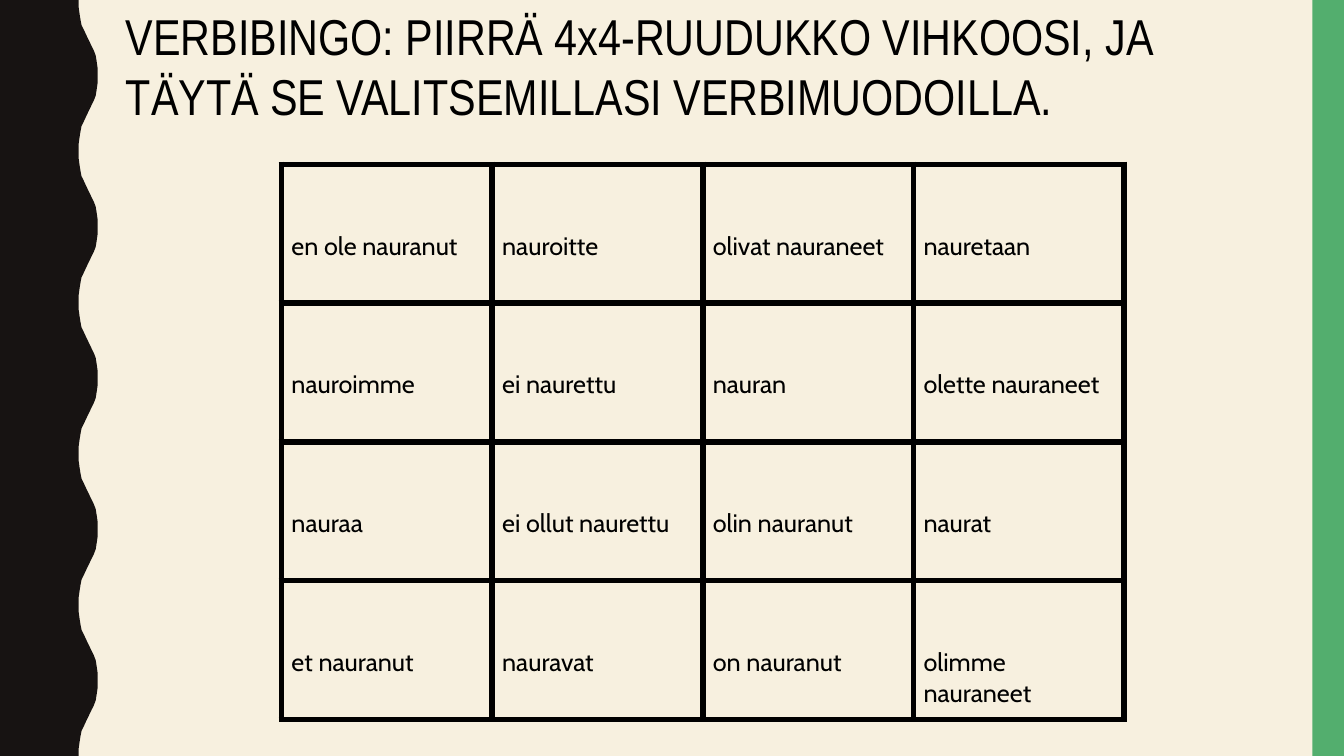
from dataclasses import dataclass

from lxml.etree import SubElement
from pptx import Presentation
from pptx.dml.color import RGBColor
from pptx.enum.shapes import MSO_SHAPE
from pptx.enum.text import MSO_AUTO_SIZE
from pptx.oxml.ns import qn
from pptx.shapes.autoshape import Shape
from pptx.table import _Cell
from pptx.util import Pt

CREAM = RGBColor(0xF7, 0xF0, 0xDF)
DARK = RGBColor(0x17, 0x13, 0x12)
GREEN = RGBColor(0x53, 0xAE, 0x6E)
BLACK = RGBColor(0, 0, 0)

SLIDE_WIDTH, SLIDE_HEIGHT = 960, 540
WAVE_PERIOD = 108

TITLE = ("VERBIBINGO: PIIRRÄ 4x4-RUUDUKKO VIHKOOSI, JA "
         "TÄYTÄ SE VALITSEMILLASI VERBIMUODOILLA.")
VERB_FORMS = [
    ["en ole nauranut", "nauroitte", "olivat nauraneet", "nauretaan"],
    ["nauroimme", "ei naurettu", "nauran", "olette nauraneet"],
    ["nauraa", "ei ollut naurettu", "olin nauranut", "naurat"],
    ["et nauranut", "nauravat", "on nauranut", "olimme nauraneet"],
]


@dataclass(frozen=True)
class WavePoint:
    x: float
    y: float


# Edge of the wave from a trough to the next crest
HALF_WAVE = [
    WavePoint(56.2, 0), WavePoint(56.2, 5), WavePoint(56.9, 10),
    WavePoint(57.6, 14.4), WavePoint(58.3, 18), WavePoint(59.8, 21),
    WavePoint(61.2, 24), WavePoint(62.6, 27), WavePoint(64.1, 30),
    WavePoint(65.5, 33), WavePoint(67, 36), WavePoint(68.4, 39.6),
    WavePoint(69.1, 44), WavePoint(69.8, 49), WavePoint(69.8, 54),
]


def paint(shape: Shape, color: RGBColor) -> None:
    shape.fill.solid()
    shape.fill.fore_color.rgb = color
    shape.line.fill.background()
    shape.shadow.inherit = False


def wave_edge() -> list[WavePoint]:
    falling = [WavePoint(p.x, WAVE_PERIOD - p.y) for p in HALF_WAVE[-2::-1]]
    return [WavePoint(p.x, top + p.y)
            for top in range(0, SLIDE_HEIGHT, WAVE_PERIOD)
            for p in HALF_WAVE + falling]


def set_borders(cell: _Cell, width: float, color: RGBColor) -> None:
    properties = cell._tc.get_or_add_tcPr()
    for side in ("a:lnL", "a:lnR", "a:lnT", "a:lnB"):
        line = SubElement(properties, qn(side), w=str(Pt(width)))
        fill = SubElement(line, qn("a:solidFill"))
        SubElement(fill, qn("a:srgbClr"), val=str(color))


def fill_bingo_cell(cell: _Cell, verb_form: str) -> None:
    set_borders(cell, 4.5, BLACK)
    cell.fill.background()
    cell.margin_top = Pt(47.4)
    cell.text = verb_form
    font = cell.text_frame.paragraphs[0].font
    font.name, font.size = "Cabin", Pt(18)
    font.color.rgb = BLACK


def main() -> None:
    presentation = Presentation()
    presentation.slide_width = Pt(SLIDE_WIDTH)
    presentation.slide_height = Pt(SLIDE_HEIGHT)
    slide = presentation.slides.add_slide(presentation.slide_layouts[6])
    slide.background.fill.solid()
    slide.background.fill.fore_color.rgb = CREAM

    # Wavy band on the left
    outline = slide.shapes.build_freeform(0, 0)
    edge = [(Pt(p.x), Pt(p.y)) for p in wave_edge()]
    outline.add_line_segments(edge + [(0, Pt(SLIDE_HEIGHT))], close=True)
    paint(outline.convert_to_shape(), DARK)

    # Green strip on the right
    strip = slide.shapes.add_shape(
        MSO_SHAPE.RECTANGLE, Pt(937.5), 0, Pt(22.5), Pt(SLIDE_HEIGHT))
    paint(strip, GREEN)

    # Bingo grid
    grid = slide.shapes.add_table(
        len(VERB_FORMS), len(VERB_FORMS[0]),
        Pt(201), Pt(117.4), Pt(602), Pt(396.4)).table
    grid.first_row = grid.horz_banding = False
    for row, verb_forms in enumerate(VERB_FORMS):
        for column, verb_form in enumerate(verb_forms):
            fill_bingo_cell(grid.cell(row, column), verb_form)

    # Title
    title = slide.shapes.add_textbox(Pt(82.8), 0, Pt(774), Pt(94.3)).text_frame
    title.word_wrap = True
    title.auto_size = MSO_AUTO_SIZE.SHAPE_TO_FIT_TEXT
    title.text = TITLE
    font = title.paragraphs[0].font
    font.name, font.size = "Arial Narrow", Pt(36)
    font.color.rgb = BLACK

    presentation.save("out.pptx")


if __name__ == "__main__":
    main()
